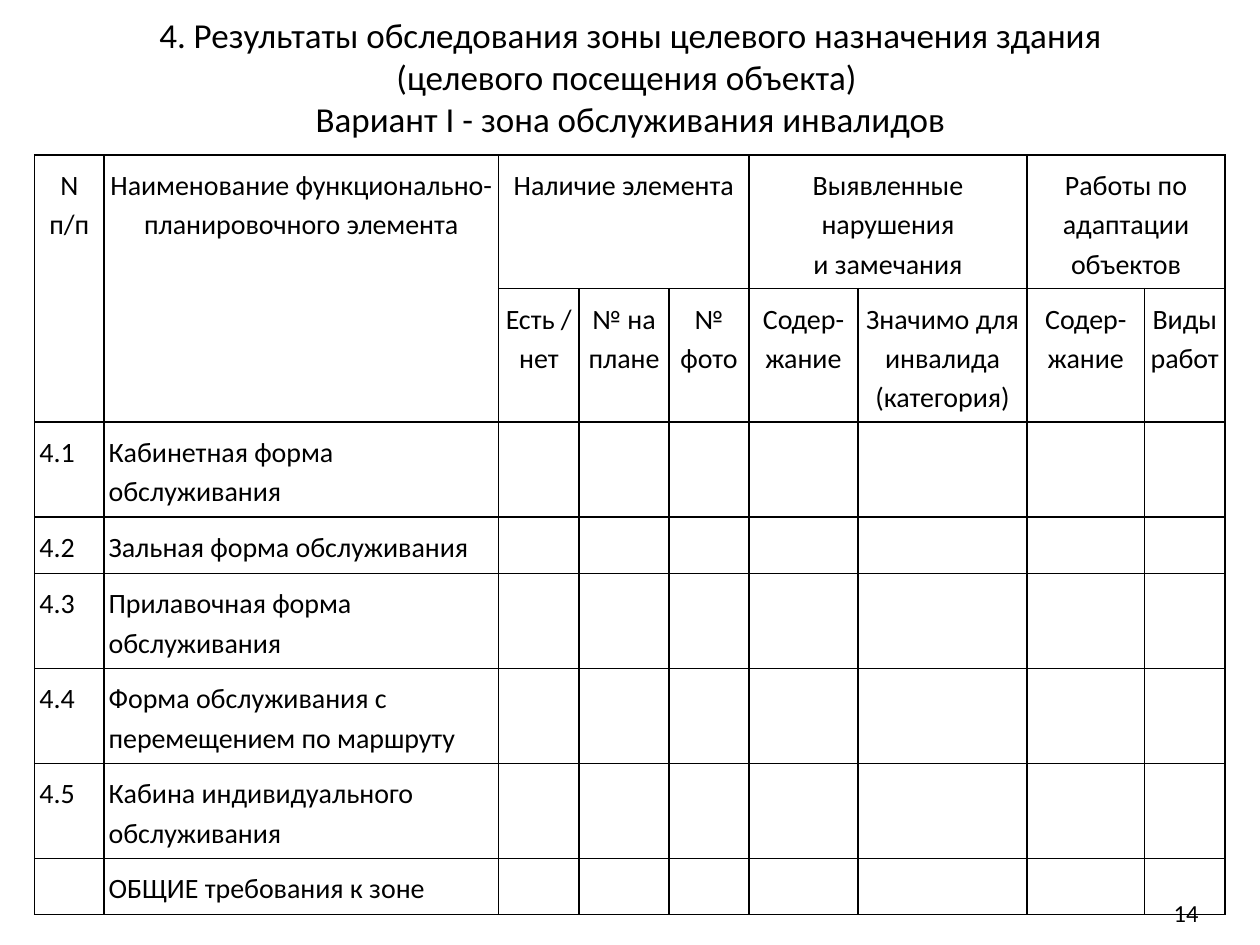
from pptx import Presentation
from pptx.util import Pt
from pptx.dml.color import RGBColor
from pptx.enum.text import PP_ALIGN, MSO_ANCHOR, MSO_AUTO_SIZE
from lxml.etree import SubElement
from pptx.oxml.ns import qn
from dataclasses import dataclass


@dataclass(frozen=True)
class Theme:
    font: str = "Calibri"
    ink: str = "000000"
    head: int = 20
    body: int = 16
    note: int = 14
    rule: float = 1


LOOK = Theme()

# Content
TITLE = [
    "4. Результаты обследования зоны целевого назначения здания",
    "(целевого посещения объекта) ",
    "Вариант I - зона обслуживания инвалидов",
]
# Header cells: row, column, rows spanned, columns spanned, lines
HEADS = [
    (0, 0, 2, 1, ["N п/п"]),
    (0, 1, 2, 1, ["Наименование функционально-планировочного элемента"]),
    (0, 2, 1, 3, ["Наличие элемента"]),
    (0, 5, 1, 2, ["Выявленные нарушения", "и замечания"]),
    (0, 7, 1, 2, ["Работы по адаптации объектов"]),
]
SUBS = ["Есть / нет", "№ на плане", "№ фото", "Содер-жание",
        "Значимо для инвалида (категория)", "Содер-жание", "Виды работ"]
ITEMS = [
    ("4.1", "Кабинетная форма обслуживания"),
    ("4.2", "Зальная форма обслуживания"),
    ("4.3", "Прилавочная форма обслуживания"),
    ("4.4", "Форма обслуживания с перемещением по маршруту"),
    ("4.5", "Кабина индивидуального обслуживания"),
    ("", "ОБЩИЕ требования к зоне"),
]
PAGE = "14"

# Sizes in points
COLS = [39.6, 225.6, 45.9, 51.5, 45.6, 62.4, 96.6, 67.1, 46]
TALL, MID, LOW = 76.3, 54.3, 32.2
ROWS = [TALL, TALL, MID, LOW, MID, MID, MID, LOW]
LEFT, TOP = 19.8, 88.6


def write(frame, lines, size, align, gap=1.0):
    for i, line in enumerate(lines):
        para = frame.paragraphs[0] if i == 0 else frame.add_paragraph()
        para.alignment = align
        para.line_spacing = gap
        para.space_before = Pt(0)
        run = para.add_run()
        run.text = line
        run.font.name = LOOK.font
        run.font.size = Pt(size)
        run.font.color.rgb = RGBColor.from_string(LOOK.ink)


def fill_cell(cell, lines, align):
    write(cell.text_frame, lines, LOOK.body, align, 1.15)


def style(cell):
    cell.margin_left = cell.margin_right = Pt(2.7)
    cell.margin_top = cell.margin_bottom = Pt(5)
    cell.vertical_anchor = MSO_ANCHOR.TOP
    props = cell._tc.get_or_add_tcPr()
    for side in ("lnL", "lnR", "lnT", "lnB"):
        line = SubElement(props, qn("a:" + side), w=str(int(Pt(LOOK.rule))))
        paint = SubElement(line, qn("a:solidFill"))
        SubElement(paint, qn("a:srgbClr"), val=LOOK.ink)
    cell.fill.background()


def add_grid(slide):
    grid = slide.shapes.add_table(
        len(ROWS), len(COLS), Pt(LEFT), Pt(TOP),
        Pt(sum(COLS)), Pt(sum(ROWS))).table
    grid.first_row = grid.horz_banding = False
    for col, wide in zip(grid.columns, COLS):
        col.width = Pt(wide)
    for row, high in zip(grid.rows, ROWS):
        row.height = Pt(high)
        for cell in row.cells:
            style(cell)

    # Header rows
    for r, c, down, over, lines in HEADS:
        cell = grid.cell(r, c)
        cell.merge(grid.cell(r + down - 1, c + over - 1))
        fill_cell(cell, lines, PP_ALIGN.CENTER)
    for c, text in enumerate(SUBS, 2):
        fill_cell(grid.cell(1, c), [text], PP_ALIGN.CENTER)

    # Item rows
    for r, (num, name) in enumerate(ITEMS, 2):
        if num:
            fill_cell(grid.cell(r, 0), [num], PP_ALIGN.JUSTIFY)
        fill_cell(grid.cell(r, 1), [name], PP_ALIGN.LEFT)


def main():
    deck = Presentation()
    deck.slide_width, deck.slide_height = Pt(720), Pt(540)
    slide = deck.slides.add_slide(deck.slide_layouts[5])

    # Title
    title = slide.shapes.title
    title.left, title.top = Pt(11.5), Pt(4.3)
    title.width, title.height = Pt(697.7), Pt(80)
    frame = title.text_frame
    frame.word_wrap = True
    frame.auto_size = MSO_AUTO_SIZE.SHAPE_TO_FIT_TEXT
    frame.vertical_anchor = MSO_ANCHOR.TOP
    write(frame, TITLE, LOOK.head, PP_ALIGN.CENTER)

    add_grid(slide)

    # Page number
    box = slide.shapes.add_textbox(Pt(524.2), Pt(506.9), Pt(167.8), Pt(28.8))
    box.text_frame.word_wrap = True
    box.text_frame.vertical_anchor = MSO_ANCHOR.MIDDLE
    write(box.text_frame, [PAGE], LOOK.note, PP_ALIGN.RIGHT)

    deck.save("out.pptx")


if __name__ == "__main__":
    main()
